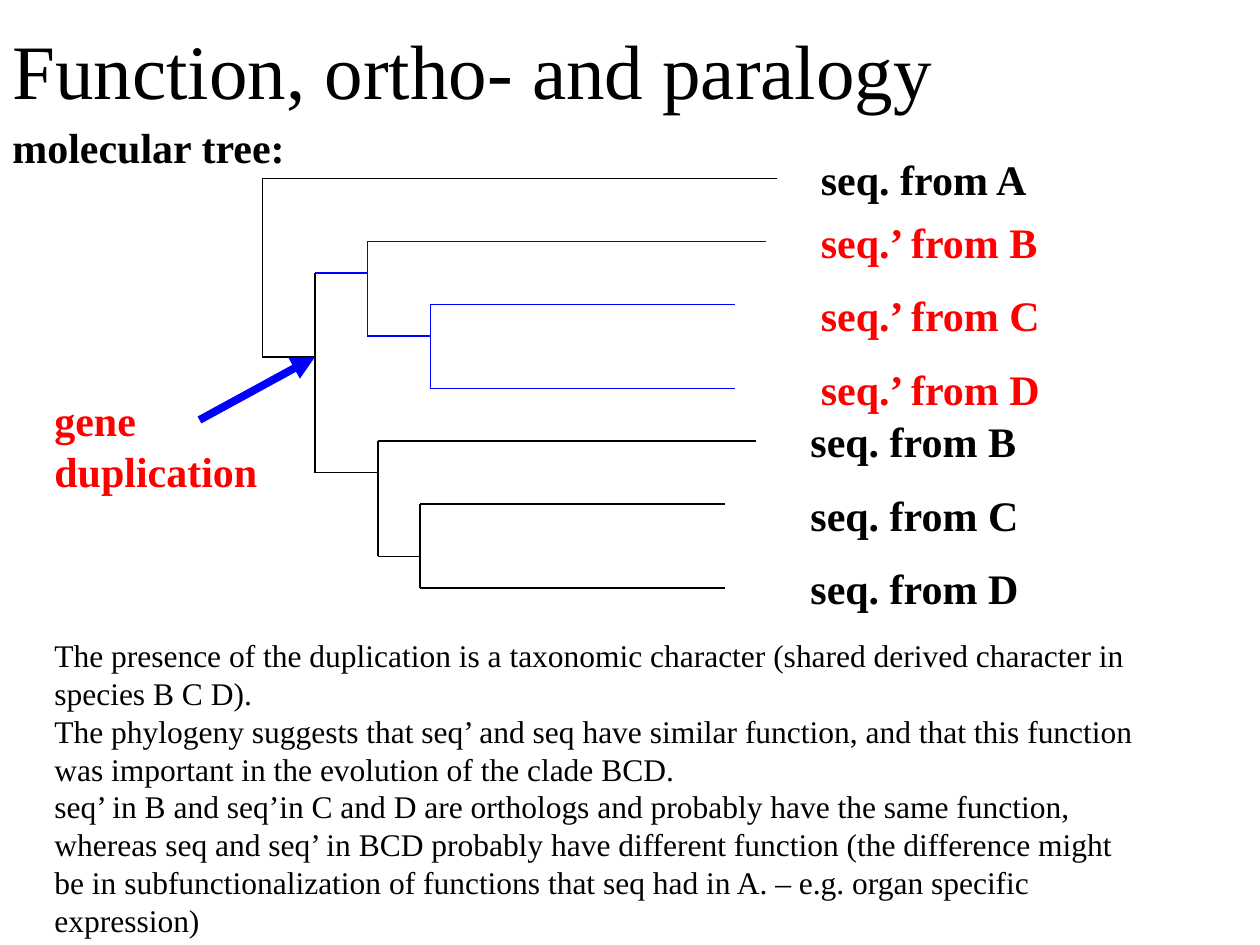
from dataclasses import dataclass

from pptx import Presentation
from pptx.dml.color import RGBColor as Rgb
from pptx.enum.shapes import MSO_CONNECTOR as Conn
from pptx.enum.text import MSO_ANCHOR as Anchor, MSO_AUTO_SIZE as Fit, PP_ALIGN as Align
from pptx.oxml.ns import qn
from pptx.util import Emu, Pt
from lxml.etree import SubElement

PX = 7620  # 120 px to the inch
FONT = "Times New Roman"
BLACK, BLUE, RED = "000000", "0000FF", "FF0000"


@dataclass
class Line:
    x1: int
    y1: int
    x2: int
    y2: int
    color: str = BLACK
    width: float = 0.75
    arrow: bool = False


@dataclass
class Fork:
    """A node: its upright at x, and the x where each arm ends."""
    x: int
    top: int
    low: int
    top_end: int
    low_end: int
    color: str = BLACK


@dataclass
class Label:
    text: str
    x: int
    y: int
    w: int
    h: int = 60
    size: int = 24
    color: str = BLACK
    bold: bool = True
    wrap: bool = True


def px(n: int) -> Emu:
    return Emu(n * PX)


def rgb(code: str) -> Rgb:
    return Rgb.from_string(code)


def style(frame, size: int, color: str, bold: bool) -> None:
    for para in frame.paragraphs:
        para.alignment = Align.LEFT
        for run in para.runs:
            font = run.font
            font.name, font.size, font.bold = FONT, Pt(size), bold
            font.color.rgb = rgb(color)


def draw_line(slide, line: Line) -> None:
    ends = (px(n) for n in (line.x1, line.y1, line.x2, line.y2))
    conn = slide.shapes.add_connector(Conn.STRAIGHT, *ends)
    conn.line.color.rgb = rgb(line.color)
    conn.line.width = Pt(line.width)
    props = conn.element.spPr
    if line.arrow:
        SubElement(props.find(qn("a:ln")), qn("a:tailEnd"), type="triangle")
    SubElement(props, qn("a:effectLst"))


def draw_fork(slide, fork: Fork) -> None:
    x, top, low, color = fork.x, fork.top, fork.low, fork.color
    draw_line(slide, Line(x, top, x, low, color))
    draw_line(slide, Line(x, top, fork.top_end, top, color))
    draw_line(slide, Line(x, low, fork.low_end, low, color))


def draw_label(slide, label: Label) -> None:
    box = slide.shapes.add_textbox(px(label.x), px(label.y), px(label.w), px(label.h))
    frame = box.text_frame
    frame.word_wrap = label.wrap
    frame.text = label.text
    style(frame, label.size, label.color, label.bold)


def draw_title(slide, text: str) -> None:
    title = slide.shapes.title
    title.left, title.top, title.width, title.height = px(0), px(0), px(1020), px(130)
    frame = title.text_frame
    frame.text = text
    frame.auto_size = Fit.NONE
    frame.vertical_anchor = Anchor.MIDDLE
    style(frame, 44, BLACK, False)


BODY = "\n".join([
    "The presence of the duplication is a taxonomic character "
    "(shared derived character in species B C D).",
    "The phylogeny suggests that seq’ and seq have similar function, "
    "and that this function was important in the evolution of the clade BCD.",
    "seq’ in B and seq’in C and D are orthologs and probably have the same function, "
    "whereas seq and seq’ in BCD probably have different function (the difference might "
    "be in subfunctionalization of functions that seq had in A. – e.g. organ specific "
    "expression)",
])

# Tree nodes; the root's lower arm meets the duplication
FORKS = [
    Fork(250, 170, 340, 740, 300),
    Fork(350, 230, 320, 730, 410, BLUE),
    Fork(410, 290, 370, 700, 700, BLUE),
    Fork(360, 420, 530, 720, 400),
    Fork(400, 480, 560, 690, 690),
]
# Duplication node, with one arm per gene copy, and its pointer
LINES = [
    Line(300, 260, 300, 450),
    Line(300, 260, 350, 260, BLUE),
    Line(300, 450, 360, 450),
    Line(190, 400, 300, 340, BLUE, 4.5, True),
]
LEAVES = [
    Label("seq. from A", 770, 140, 270),
    *(Label(f"seq.’ from {name}", 770, 200 + 70 * i, 270, color=RED)
      for i, name in enumerate("BCD")),
    *(Label(f"seq. from {name}", 760, 390 + 70 * i, 270)
      for i, name in enumerate("BCD")),
]
NOTES = [
    Label("molecular tree:", 0, 110, 293, wrap=False),
    Label("gene duplication", 40, 370, 257, 109, color=RED),
    Label(BODY, 40, 600, 1062, 302, size=18, bold=False),
]


def main() -> None:
    deck = Presentation()
    deck.slide_width, deck.slide_height = px(1200), px(900)
    slide = deck.slides.add_slide(deck.slide_layouts[5])
    draw_title(slide, "Function, ortho- and paralogy")
    for fork in FORKS:
        draw_fork(slide, fork)
    for line in LINES:
        draw_line(slide, line)
    for label in LEAVES + NOTES:
        draw_label(slide, label)
    deck.save("out.pptx")


if __name__ == "__main__":
    main()
